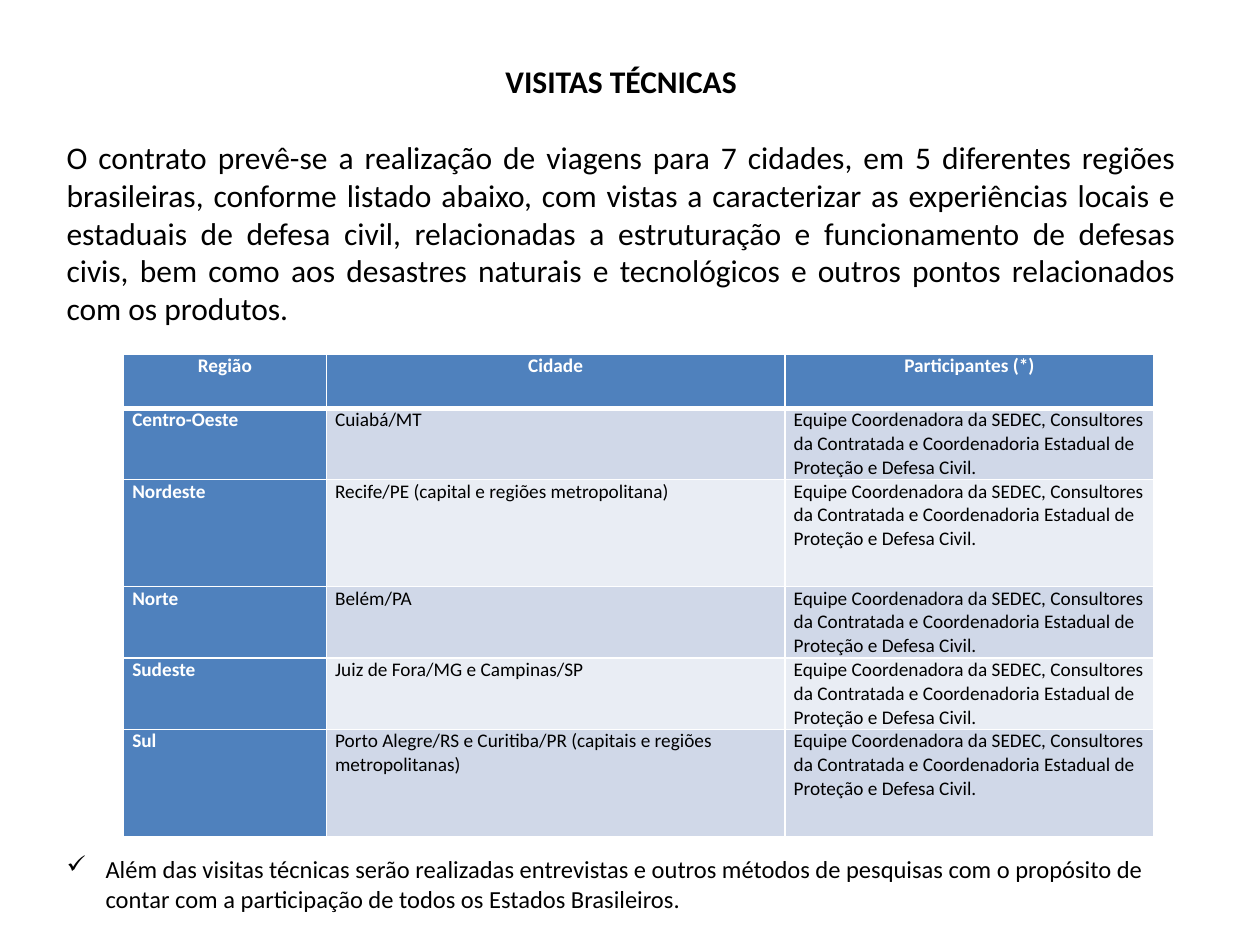
from lxml.etree import SubElement
from pptx import Presentation
from pptx.dml.color import RGBColor
from pptx.enum.text import MSO_AUTO_SIZE, PP_ALIGN
from pptx.oxml.ns import qn
from pptx.util import Inches, Pt

FONT = "Calibri"
BLACK, WHITE, BLUE = "000000", "FFFFFF", "4F81BD"
BANDS = ("D0D8E8", "E9EDF4")
MARGIN, CONTENT_WIDTH = 0.43, 9

INTRODUCTION = (
    "O contrato prevê-se a realização de viagens para 7 cidades, em 5 diferentes regiões "
    "brasileiras, conforme listado abaixo, com vistas a caracterizar as experiências locais e "
    "estaduais de defesa civil, relacionadas a estruturação e funcionamento de defesas civis, "
    "bem como aos desastres naturais e tecnológicos e outros pontos relacionados com os produtos."
)
CLOSING = (
    "Além das visitas técnicas serão realizadas entrevistas e outros métodos de pesquisas com o "
    "propósito de contar com a participação de todos os Estados Brasileiros."
)
PARTICIPANTS = (
    "Equipe Coordenadora da SEDEC, Consultores da Contratada e Coordenadoria Estadual de "
    "Proteção e Defesa Civil."
)
HEADINGS = ("Região", "Cidade", "Participantes (*)")
CITIES = {
    "Centro-Oeste": "Cuiabá/MT",
    "Nordeste": "Recife/PE (capital e regiões metropolitana)",
    "Norte": "Belém/PA",
    "Sudeste": "Juiz de Fora/MG e Campinas/SP",
    "Sul": "Porto Alegre/RS e Curitiba/PR (capitais e regiões metropolitanas)",
}
COLUMN_WIDTHS = (1.61, 3.64, 2.93)
ROW_HEIGHTS = (0.43, 0.43, 0.85, 0.43, 0.43, 0.85)


def color(hex_string):
    return RGBColor.from_string(hex_string)


def add_run(paragraph, text, size, hex_color=BLACK, bold=False):
    run = paragraph.add_run()
    run.text = text
    run.font.name = FONT
    run.font.size = Pt(size)
    run.font.bold = bold
    run.font.color.rgb = color(hex_color)


def add_text_box(slide, top, height):
    box = slide.shapes.add_textbox(
        Inches(MARGIN), Inches(top), Inches(CONTENT_WIDTH), Inches(height))
    box.text_frame.word_wrap = True
    box.text_frame.auto_size = MSO_AUTO_SIZE.SHAPE_TO_FIT_TEXT
    return box.text_frame


def set_bullet(paragraph, character, indent):
    properties = paragraph._p.get_or_add_pPr()
    properties.set("marL", str(Inches(indent)))
    properties.set("indent", str(-Inches(indent)))
    SubElement(properties, qn("a:buChar"), char=character)


def set_borders(cell, top=1, bottom=1):
    properties = cell._tc.get_or_add_tcPr()
    for side, width in (("L", 1), ("R", 1), ("T", top), ("B", bottom)):
        line = SubElement(properties, qn(f"a:ln{side}"), w=str(Pt(width)))
        fill = SubElement(line, qn("a:solidFill"))
        SubElement(fill, qn("a:srgbClr"), val=WHITE)


def fill_cell(cell, text, row, column):
    is_header = row == 0
    is_label = is_header or column == 0
    # The rule under the header is thicker than the others
    set_borders(cell, top=3 if row == 1 else 1, bottom=3 if is_header else 1)
    cell.fill.solid()
    cell.fill.fore_color.rgb = color(BLUE if is_label else BANDS[(row - 1) % 2])
    cell.margin_left = cell.margin_right = Inches(0.07)
    cell.margin_top = cell.margin_bottom = 0
    paragraph = cell.text_frame.paragraphs[0]
    paragraph.alignment = PP_ALIGN.CENTER if is_header else PP_ALIGN.LEFT
    add_run(paragraph, text, 11, WHITE if is_label else BLACK, bold=is_label)


def add_visits_table(slide):
    rows = [HEADINGS] + [(region, city, PARTICIPANTS) for region, city in CITIES.items()]
    frame = slide.shapes.add_table(
        len(rows), len(HEADINGS), Inches(0.98), Inches(2.81), Inches(8.19), Inches(3.78))
    table = frame.table
    for column, width in zip(table.columns, COLUMN_WIDTHS):
        column.width = Inches(width)
    for row, height in zip(table.rows, ROW_HEIGHTS):
        row.height = Inches(height)
    frame.height = Inches(3.78)
    for row, texts in enumerate(rows):
        for column, text in enumerate(texts):
            fill_cell(table.cell(row, column), text, row, column)


def main():
    presentation = Presentation()
    presentation.slide_width, presentation.slide_height = Inches(10), Inches(7.5)
    slide = presentation.slides.add_slide(presentation.slide_layouts[6])

    # Regions, cities and participants
    add_visits_table(slide)

    # Title and introduction
    text_frame = add_text_box(slide, 0.44, 2.22)
    title = text_frame.paragraphs[0]
    title.alignment = PP_ALIGN.CENTER
    add_run(title, "VISITAS TÉCNICAS", 18, bold=True)
    introduction = text_frame.add_paragraph()
    introduction.alignment = PP_ALIGN.JUSTIFY
    introduction.space_before = Pt(22)
    add_run(introduction, INTRODUCTION, 18)

    # Closing remark
    closing = add_text_box(slide, 6.73, 0.57).paragraphs[0]
    set_bullet(closing, "✓", 0.31)
    add_run(closing, CLOSING, 14)

    presentation.save("out.pptx")


if __name__ == "__main__":
    main()
